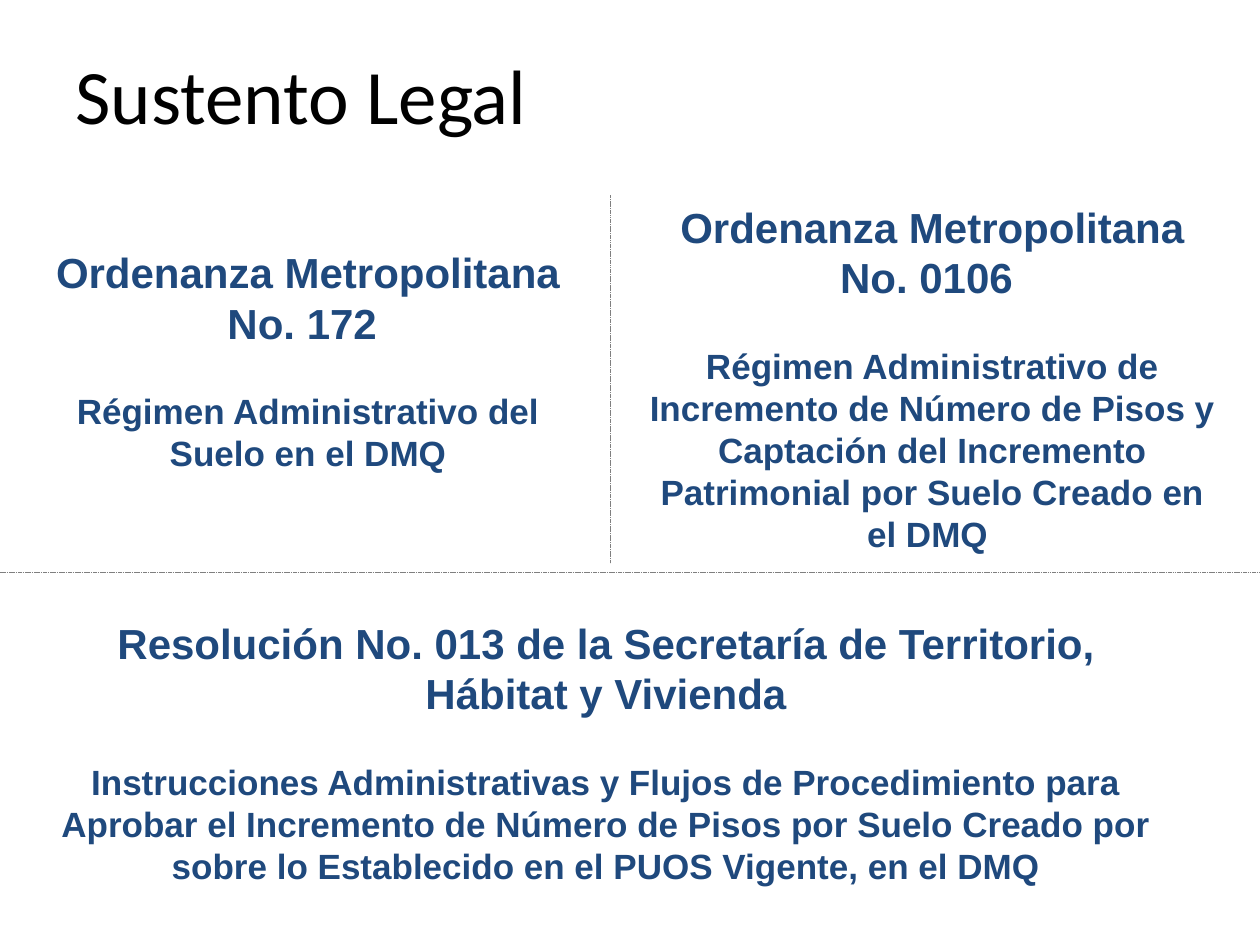
from lxml.etree import SubElement
from pptx import Presentation
from pptx.dml.color import RGBColor
from pptx.enum.dml import MSO_LINE_DASH_STYLE as Dash
from pptx.enum.shapes import MSO_CONNECTOR as Connector
from pptx.enum.text import MSO_ANCHOR as Anchor, PP_ALIGN as Align
from pptx.oxml.ns import qn
from pptx.util import Inches, Pt

WIDTH, HEIGHT = 10, 7.5
NAVY, GREY, BLACK = "1F497D", "7F7F7F", "000000"

# Grid: the column divider, the row divider and the shared left and top edges
COLUMN, ROW = 4.84, 4.54
LEFT, TOP = 0.28, 1.55

# Left, top, width, height, heading, description
BLOCKS = [
    (LEFT, 1.91, 4.33, 1.92, "Ordenanza Metropolitana No. 172 ",
     "Régimen Administrativo del Suelo en el DMQ"),
    (WIDTH / 2, TOP, 4.8, 2.93, "Ordenanza Metropolitana No. 0106 ",
     "Régimen Administrativo de Incremento de Número de Pisos y Captación "
     "del Incremento Patrimonial por Suelo Creado en el DMQ "),
    (LEFT, 4.85, 9.06, 2.26,
     "Resolución No. 013 de la Secretaría de Territorio, Hábitat y Vivienda",
     "Instrucciones Administrativas y Flujos de Procedimiento para Aprobar el "
     "Incremento de Número de Pisos por Suelo Creado por sobre lo Establecido "
     "en el PUOS Vigente, en el DMQ"),
]


def color(value):
    return RGBColor.from_string(value)


def add_box(page, left, top, width, height):
    box = page.shapes.add_textbox(*map(Inches, (left, top, width, height)))
    frame = box.text_frame
    frame.word_wrap = True
    frame.vertical_anchor = Anchor.TOP
    return frame


def add_span(para, text, size, font, tint, bold=False):
    span = para.add_run()
    span.text = text
    span.font.size = Pt(size)
    span.font.name = font
    span.font.bold = bold
    span.font.color.rgb = color(tint)


def add_title(page, text):
    frame = add_box(page, 0.5, 0.3, 9, 1.25)
    frame.margin_top = Inches(0.08)
    add_span(frame.paragraphs[0], text, 44, "Calibri", BLACK)


def add_block(page, left, top, width, height, heading, description):
    frame = add_box(page, left, top, width, height)
    lines = [(frame.paragraphs[0], heading, 24),
             (frame.add_paragraph(), description, 20)]
    for para, text, size in lines:
        para.alignment = Align.CENTER
        para.line_spacing = Pt(size * 1.2)
        add_span(para, text, size, "Arial", NAVY, bold=True)
    para.space_before = Pt(24)


def add_divider(page, *ends):
    line = page.shapes.add_connector(Connector.STRAIGHT, *map(Inches, ends))
    line.line.color.rgb = color(GREY)
    line.line.width = Pt(0.25)
    line.line.dash_style = Dash.SQUARE_DOT
    SubElement(line._element.spPr, qn("a:effectLst"))


def main():
    deck = Presentation()
    deck.slide_width, deck.slide_height = Inches(WIDTH), Inches(HEIGHT)
    page = deck.slides.add_slide(deck.slide_layouts[6])

    # Legal texts
    for block in BLOCKS:
        add_block(page, *block)

    # Dividers
    add_divider(page, COLUMN, TOP, COLUMN, 4.47)
    add_divider(page, WIDTH, ROW, 0, ROW)

    add_title(page, "Sustento Legal")
    deck.save("out.pptx")


if __name__ == "__main__":
    main()
